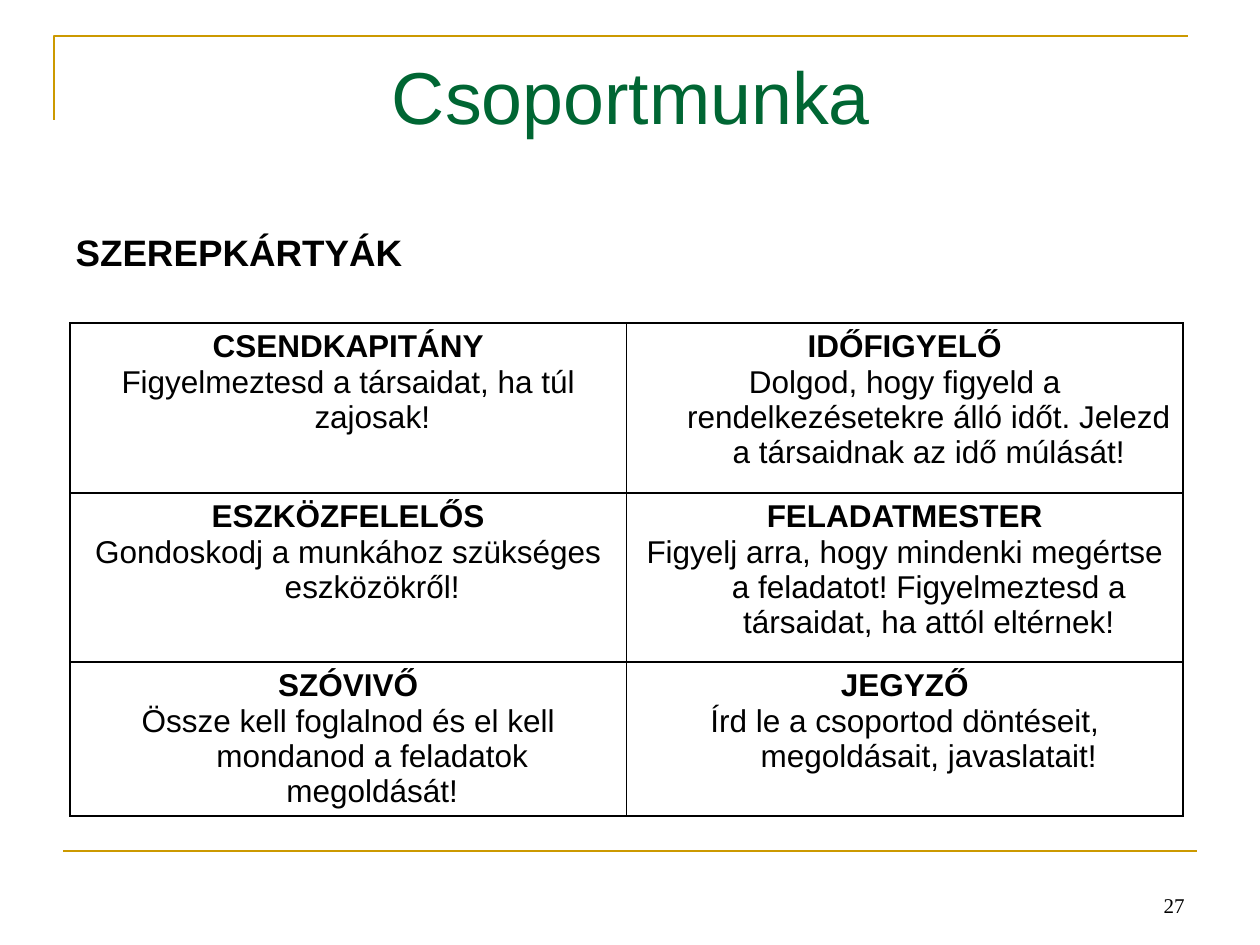
from lxml.etree import SubElement
from pptx import Presentation
from pptx.dml.color import RGBColor
from pptx.enum.shapes import MSO_CONNECTOR
from pptx.enum.text import MSO_ANCHOR, PP_ALIGN
from pptx.oxml.ns import qn
from pptx.util import Pt

PX = 914400 / 126
GOLD, GREEN, BLACK = "CC9900", "006633", "000000"
ROLES = [
    [("CSENDKAPITÁNY", "Figyelmeztesd a társaidat, ha túl zajosak!"),
     ("IDŐFIGYELŐ", "Dolgod, hogy figyeld a rendelkezésetekre álló időt. "
                    "Jelezd a társaidnak az idő múlását!")],
    [("ESZKÖZFELELŐS", "Gondoskodj a munkához szükséges eszközökről!"),
     ("FELADATMESTER", "Figyelj arra, hogy mindenki megértse a feladatot! "
                       "Figyelmeztesd a társaidat, ha attól eltérnek!")],
    [("SZÓVIVŐ", "Össze kell foglalnod és el kell mondanod a feladatok megoldását!"),
     ("JEGYZŐ", "Írd le a csoportod döntéseit, megoldásait, javaslatait!")],
]


def px(length):
    return round(length * PX)


def color(hex_string):
    return RGBColor.from_string(hex_string)


def place(shape, box):
    shape.left, shape.top, shape.width, shape.height = map(px, box)


def write(paragraph, text, size, hex_color=BLACK, bold=False,
          align=PP_ALIGN.LEFT, font="Arial"):
    paragraph.text = text
    paragraph.alignment = align
    paragraph.font.name = font
    paragraph.font.size = Pt(size)
    paragraph.font.bold = bold
    paragraph.font.color.rgb = color(hex_color)


def hang(paragraph, indent):
    """Give the paragraph a hanging indent without a bullet."""
    properties = paragraph._p.get_or_add_pPr()
    properties.set("marL", str(px(indent)))
    properties.set("indent", str(-px(indent)))
    SubElement(properties, qn("a:buNone"))


def style_rule(rule):
    rule.line.color.rgb = color(GOLD)
    rule.line.width = Pt(1.5)


def add_rules(slide, box):
    """Draw the corner at the top left and the line at the foot of the box."""
    left, top, width, height = box
    builder = slide.shapes.build_freeform(left, top + 84, scale=PX)
    builder.add_line_segments([(left, top), (left + width, top)], close=False)
    corner = builder.convert_to_shape()
    corner.shadow.inherit = False
    corner.fill.background()
    style_rule(corner)

    foot_left, foot_top = left + 9, top + height
    foot = slide.shapes.add_connector(
        MSO_CONNECTOR.STRAIGHT, px(foot_left), px(foot_top),
        px(foot_left + width), px(foot_top))
    style_rule(foot)
    SubElement(foot._element.spPr, qn("a:effectLst"))


def fill_placeholder(placeholder, box, margin_top, text, size, **style):
    place(placeholder, box)
    frame = placeholder.text_frame
    frame.vertical_anchor = MSO_ANCHOR.TOP
    frame.margin_top = px(margin_top)
    paragraph = frame.paragraphs[0]
    write(paragraph, text, size, **style)
    return paragraph


def add_page_number(slide, box, number):
    page = slide.shapes.add_textbox(*map(px, box))
    page.text_frame.word_wrap = True
    page.text_frame.vertical_anchor = MSO_ANCHOR.BOTTOM
    write(page.text_frame.paragraphs[0], number, 12,
          align=PP_ALIGN.RIGHT, font="Times New Roman")


def add_borders(cell):
    properties = cell._tc.get_or_add_tcPr()
    for position, side in enumerate(("lnL", "lnR", "lnT", "lnB")):
        line = SubElement(properties, qn(f"a:{side}"), w=str(Pt(1)))
        fill = SubElement(line, qn("a:solidFill"))
        SubElement(fill, qn("a:srgbClr"), val=BLACK)
        properties.remove(line)
        properties.insert(position, line)


def add_role_cards(slide, box, row_heights):
    table = slide.shapes.add_table(len(ROLES), 2, *map(px, box)).table
    table.first_row = table.horz_banding = False
    for column in table.columns:
        column.width = px(box[2] / 2)
    for row, height, roles in zip(table.rows, row_heights, ROLES):
        row.height = px(height)
        for cell, (role, task) in zip(row.cells, roles):
            cell.fill.background()
            add_borders(cell)
            heading = cell.text_frame.paragraphs[0]
            duty = cell.text_frame.add_paragraph()
            write(heading, role, 18, bold=True, align=PP_ALIGN.CENTER)
            write(duty, task, 18, align=PP_ALIGN.CENTER)
            hang(heading, 48)
            hang(duty, 48)


def main():
    presentation = Presentation()
    presentation.slide_width, presentation.slide_height = px(1260), px(945)
    slide = presentation.slides.add_slide(presentation.slide_layouts[1])
    title, body = slide.placeholders

    add_rules(slide, (54, 36, 1134, 815))
    fill_placeholder(title, (64, 36, 1134, 157), 15, "Csoportmunka", 42,
                     hex_color=GREEN, align=PP_ALIGN.CENTER)
    subtitle = fill_placeholder(body, (63, 220, 1133, 63), 10,
                                "SZEREPKÁRTYÁK", 21, bold=True)
    hang(subtitle, 68)
    add_role_cards(slide, (70, 323, 1113, 493), (170, 169, 154))
    add_page_number(slide, (903, 861, 294, 63), "27")
    presentation.save("out.pptx")


if __name__ == "__main__":
    main()
